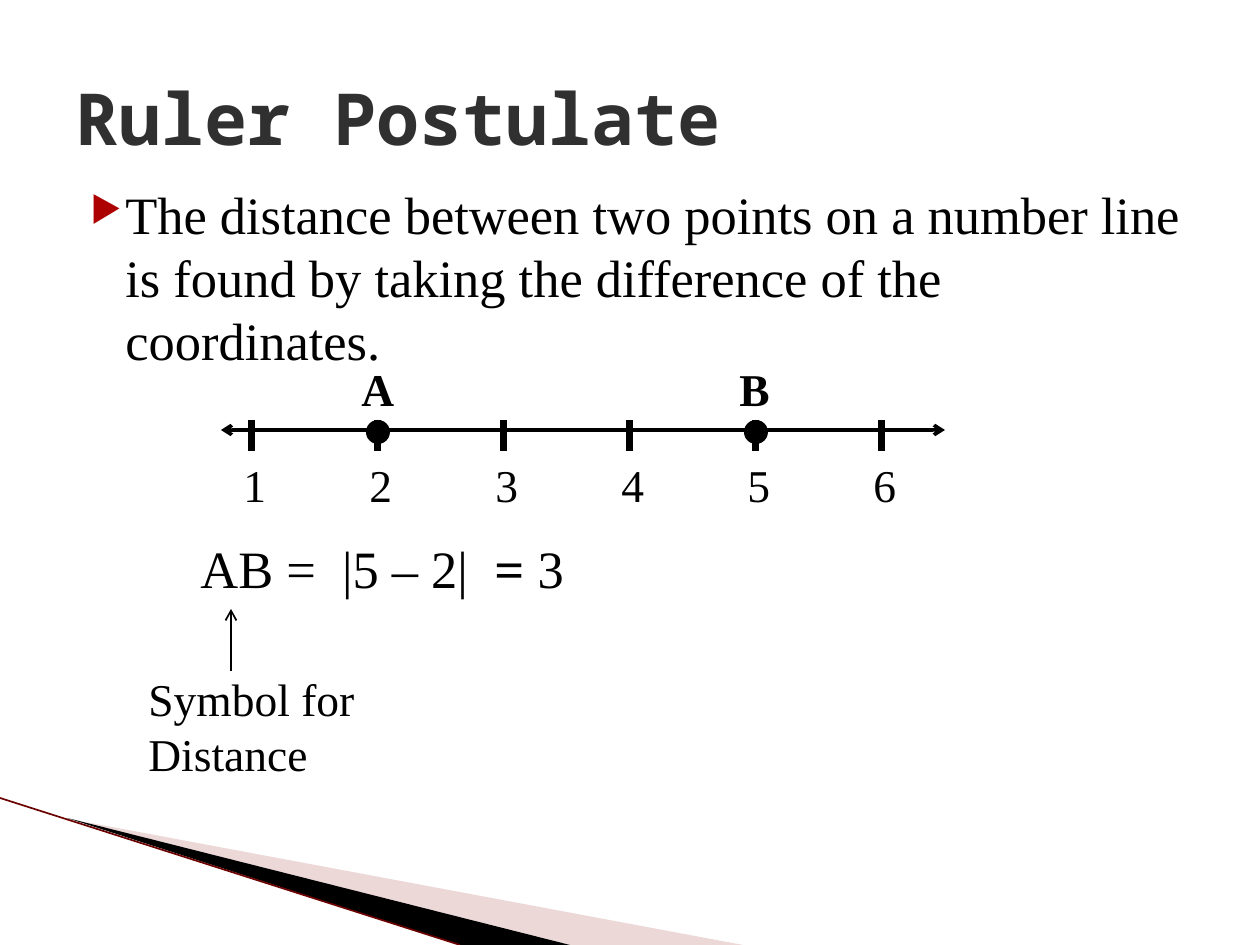
import pptx
import pptx.util
import pptx.dml.color
import pptx.enum.shapes
import pptx.enum.text
import pptx.oxml.ns
import lxml.etree

PX = 914400 // 126
SERIF = "Times New Roman"
BLACK = "000000"


def px(n):
    return pptx.util.Emu(n * PX)


def rgb(value):
    return pptx.dml.color.RGBColor.from_string(value)


def sub(parent, tag, **attrs):
    return lxml.etree.SubElement(parent, pptx.oxml.ns.qn(tag), attrs)


class Slide:
    body = {"name": SERIF, "size": 30, "bold": False, "color": BLACK}
    label = {**body, "size": 26}
    point = {**label, "bold": True}
    title = {"name": "Noto Sans Mono", "size": 41, "bold": True, "color": "303030"}

    def __init__(self, prs):
        self.shapes = prs.slides.add_slide(prs.slide_layouts[6]).shapes

    def text(self, x, y, w, h, runs, style, anchor="TOP", bullet=None):
        sp = self.shapes.add_textbox(px(x), px(y), px(w), px(h))
        tf = sp.text_frame
        tf.word_wrap = True
        tf.vertical_anchor = pptx.enum.text.MSO_ANCHOR[anchor]
        p = tf.paragraphs[0]
        if bullet:
            pPr = p._p.get_or_add_pPr()
            pPr.set("marL", str(px(50)))
            pPr.set("indent", str(px(-35)))
            clr = sub(pPr, "a:buClr")
            sub(clr, "a:srgbClr", val=bullet)
            sub(pPr, "a:buSzPct", val="68000")
            sub(pPr, "a:buChar", char="▶")
        for words, changes in runs:
            r = p.add_run()
            r.text = words
            fmt = {**style, **changes}
            r.font.color.rgb = rgb(fmt.pop("color"))
            fmt["size"] = pptx.util.Pt(fmt["size"])
            for key, value in fmt.items():
                setattr(r.font, key, value)

    def line(self, x1, y1, x2, y2, width, color=BLACK, arrows=()):
        ln = self.shapes.add_connector(
            pptx.enum.shapes.MSO_CONNECTOR.STRAIGHT, px(x1), px(y1), px(x2), px(y2))
        ln.line.width = pptx.util.Pt(width)
        ln.line.color.rgb = rgb(color)
        for end in arrows:
            sub(ln.line._get_or_add_ln(), end, type="arrow")
        sub(ln._element.spPr, "a:effectLst")

    def fill(self, sp, color, alpha=None):
        sp.shadow.inherit = False
        sp.fill.solid()
        sp.fill.fore_color.rgb = rgb(color)
        sp.line.fill.background()
        if alpha:
            clr = sp._element.spPr.find(".//" + pptx.oxml.ns.qn("a:srgbClr"))
            sub(clr, "a:alpha", val=str(alpha * 1000))

    def polygon(self, points, color, alpha=None):
        start, *rest = [(px(x), px(y)) for x, y in points]
        fb = self.shapes.build_freeform(*start)
        fb.add_line_segments(rest)
        self.fill(fb.convert_to_shape(), color, alpha)

    def dot(self, cx, cy, r):
        sp = self.shapes.add_shape(
            pptx.enum.shapes.MSO_SHAPE.OVAL, px(cx - r), px(cy - r), px(2 * r), px(2 * r))
        self.fill(sp, BLACK)


def main():
    prs = pptx.Presentation()
    prs.slide_width, prs.slide_height = px(1260), px(945)
    s = Slide(prs)

    s.polygon([(69, 819), (743, 945), (570, 945)], "D29E9E", 40)
    s.polygon([(67, 818), (570, 945), (460, 945)], BLACK)
    s.line(0, 798, 460, 945, 0.95, "6B0000")

    s.text(63, 38, 1134, 157, [("Ruler Postulate", {})], s.title, "MIDDLE")
    s.text(63, 176, 1134, 200, [(
        "The distance between two points on a number line is found "
        "by taking the difference of the coordinates.", {})], s.body, bullet="AD0101")

    unit, origin, axis = 126, 126, 430
    s.line(221, axis, 945, axis, 2, arrows=("a:headEnd", "a:tailEnd"))
    for n in range(1, 7):
        x = origin + n * unit
        s.line(x, 420, x, 451, 4)
        s.text(x - 21, 451, 63, 68, [(str(n), {})], s.label)
    for name, n in (("A", 2), ("B", 5)):
        x = origin + n * unit
        s.dot(x, axis + 2, 12)
        s.text(x - 29, 355, 63, 68, [(name, {})], s.point)

    s.text(188, 530, 440, 77,
           [("AB =  |5 – 2|", {}), ("  = ", {"bold": True}), ("3", {})], s.body)
    s.line(231, 671, 231, 609, 1, arrows=("a:tailEnd",))
    s.text(136, 665, 242, 123, [("Symbol for Distance", {})], s.label)

    prs.save("out.pptx")


if __name__ == "__main__":
    main()
